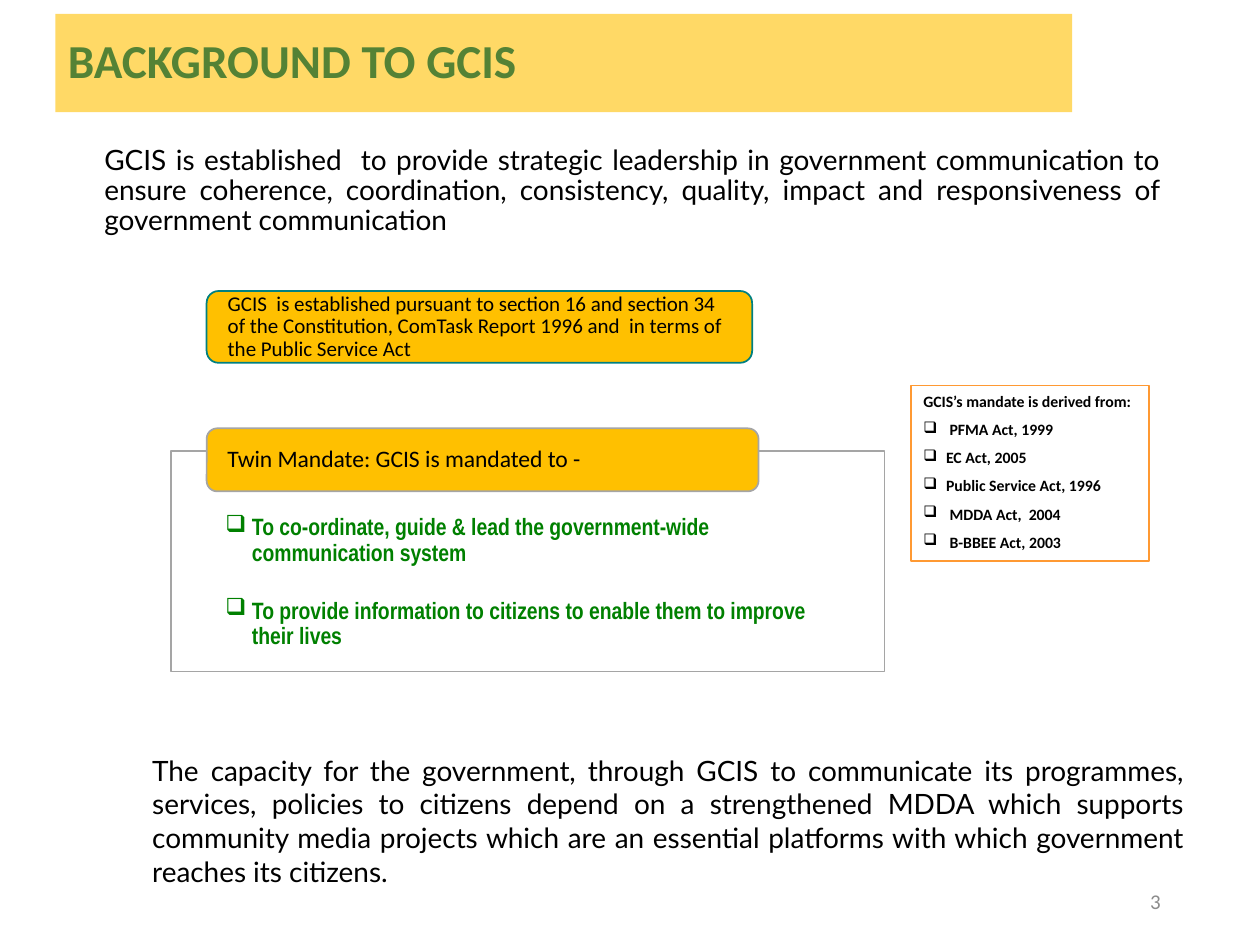
"""Builds the GCIS background slide."""
import lxml.etree
import pptx
import pptx.dml.color
import pptx.enum.shapes
import pptx.enum.text
import pptx.oxml.ns
import pptx.util

Inches = pptx.util.Inches
Pt = pptx.util.Pt
Shape = pptx.enum.shapes.MSO_SHAPE
Align = pptx.enum.text.PP_ALIGN
Anchor = pptx.enum.text.MSO_ANCHOR

AMBER = "FFC000"
GREY = "A5A5A5"
BLACK = "000000"
MANDATES = [
    "To co-ordinate, guide & lead the government-wide communication system",
    "To provide information to citizens to enable them to improve their lives",
]
ACTS = [
    " PFMA Act, 1999",
    "EC Act, 2005",
    "Public Service Act, 1996",
    " MDDA Act,  2004",
    " B-BBEE Act, 2003",
]


def color(value):
    """Return the colour for a hex string."""
    return pptx.dml.color.RGBColor.from_string(value)


def set_frame(box, anchor=Anchor.TOP, insets=(0.1, 0.05, 0.1, 0.05)):
    """Set wrapping, anchor and insets (left, top, right, bottom) of a box."""
    frame = box.text_frame
    frame.word_wrap = True
    frame.vertical_anchor = anchor
    frame.margin_left, frame.margin_top, frame.margin_right, frame.margin_bottom = map(Inches, insets)


def add_text(slide, place, **frame):
    """Add a text box."""
    box = slide.shapes.add_textbox(*map(Inches, place))
    set_frame(box, **frame)
    return box


def add_panel(slide, place, fill=None, line=None, kind=Shape.RECTANGLE, **frame):
    """Add a filled or outlined panel without a shadow."""
    panel = slide.shapes.add_shape(kind, *map(Inches, place))
    panel.shadow.inherit = False
    if fill:
        panel.fill.solid()
        panel.fill.fore_color.rgb = color(fill)
    else:
        panel.fill.background()
    if line:
        panel.line.color.rgb = color(line)
        panel.line.width = Pt(1)
    else:
        panel.line.fill.background()
    set_frame(panel, **frame)
    return panel


def add_label(slide, place, line, text, size):
    """Add an amber label with rounded corners."""
    label = add_panel(slide, place, AMBER, line, Shape.ROUNDED_RECTANGLE,
                      anchor=Anchor.MIDDLE, insets=(0.14, 0, 0.14, 0))
    write(label, [text], size, spacing=0.9)


def add_bullet(para, indent):
    """Give a paragraph a box bullet with a hanging indent in inches."""
    properties = para._p.get_or_add_pPr()
    properties.set("marL", str(Inches(indent)))
    properties.set("indent", str(-Inches(indent)))
    bullet = lxml.etree.SubElement(properties, pptx.oxml.ns.qn("a:buChar"))
    bullet.set("char", "❑")


def write(box, lines, size, font="Calibri", ink=BLACK, bold=False,
          align=Align.LEFT, spacing=1.0, gap=0, indent=0, first_bullet=0):
    """Write lines as paragraphs, bulleted from first_bullet on if indented."""
    frame = box.text_frame
    for index, line in enumerate(lines):
        para = frame.add_paragraph() if index else frame.paragraphs[0]
        para.text = line
        para.alignment = align
        para.line_spacing = spacing
        para.space_before = Pt(gap if index else 0)
        if indent and index >= first_bullet:
            add_bullet(para, indent)
        para.font.size = Pt(size)
        para.font.name = font
        para.font.bold = bold
        para.font.color.rgb = color(ink)


def main():
    """Build and save the slide."""
    deck = pptx.Presentation()
    deck.slide_width, deck.slide_height = Inches(10), Inches(7.5)
    page = deck.slides.add_slide(deck.slide_layouts[6])

    intro = add_text(page, (0.73, 1.11, 8.58, 0.85))
    write(intro, ["GCIS is established  to provide strategic leadership in government "
                  "communication to ensure coherence, coordination, consistency, quality, "
                  "impact and responsiveness of government communication"],
          16, "Lato", align=Align.JUSTIFY, spacing=0.9)

    title = add_panel(page, (0.44, 0.11, 8.07, 0.78), "FFD966", anchor=Anchor.MIDDLE)
    write(title, ["BACKGROUND TO GCIS"], 27, ink="548235", bold=True, spacing=0.9)

    number = add_text(page, (7.06, 6.95, 2.25, 0.4), anchor=Anchor.MIDDLE)
    write(number, ["3"], 12, ink="8C8C8C", align=Align.RIGHT)

    add_label(page, (1.64, 2.31, 4.33, 0.57), "008080",
              "GCIS  is established pursuant to section 16 and section 34 of the "
              "Constitution, ComTask Report 1996 and  in terms of the Public Service Act", 12)

    mandate = add_panel(page, (1.36, 3.58, 5.66, 1.75), "FFFFFF", GREY,
                        insets=(0.43, 0.51, 0.43, 0.09))
    write(mandate, MANDATES, 13.5, "Arial Narrow", "008000", True,
          spacing=0.9, gap=18.5, indent=0.21)
    add_label(page, (1.64, 3.4, 4.38, 0.5), GREY, "Twin Mandate: GCIS is mandated to -", 13.5)

    sources = add_panel(page, (7.23, 3.06, 1.89, 1.39), line="FF9933")
    write(sources, ["GCIS’s mandate is derived from:"] + ACTS, 9, bold=True,
          gap=5.25, indent=0.18, first_bullet=1)

    closing = add_text(page, (1.11, 5.93, 8.39, 1.18))
    write(closing, ["The capacity for the government, through GCIS to communicate its "
                    "programmes, services, policies to citizens depend on a strengthened "
                    "MDDA which supports community media projects which are an essential "
                    "platforms with which government reaches its citizens."],
          16, "Lato", align=Align.JUSTIFY)

    deck.save("out.pptx")


if __name__ == "__main__":
    main()
